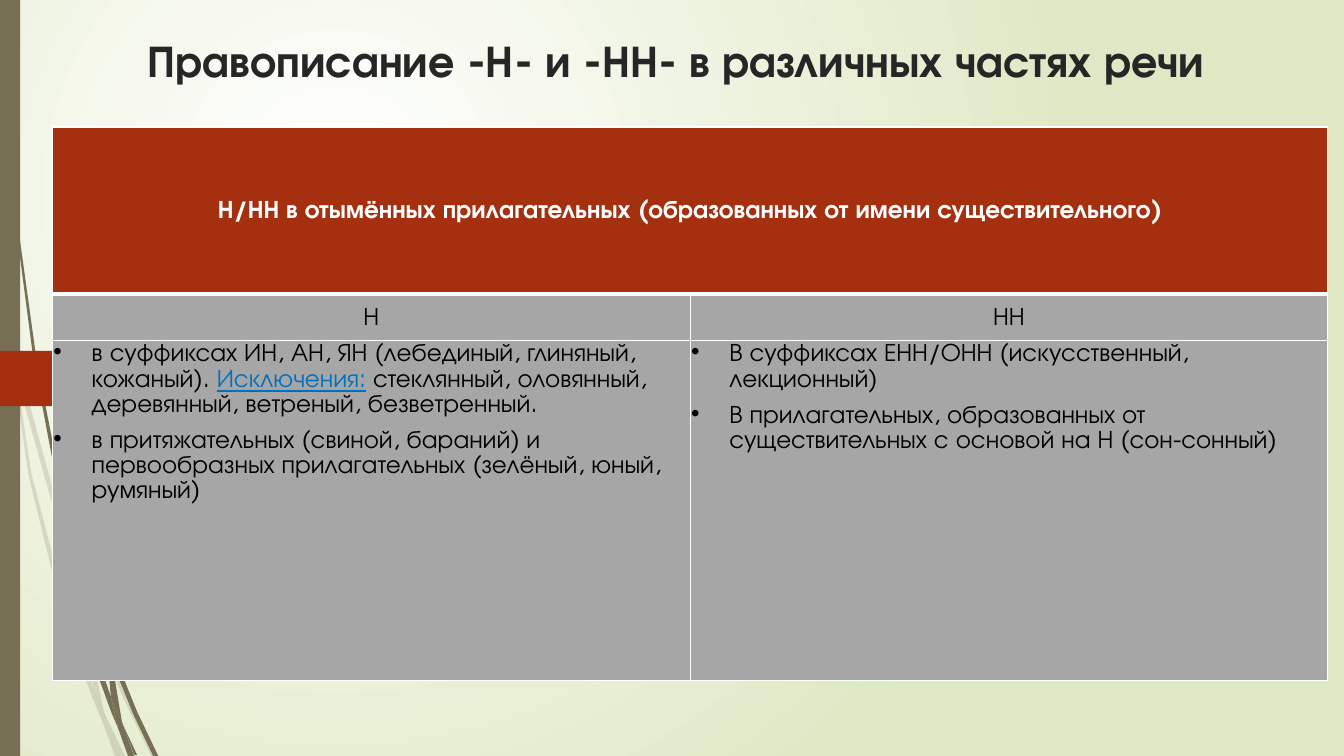
from lxml.etree import SubElement
from pptx import Presentation
from pptx.dml.color import RGBColor
from pptx.enum.shapes import MSO_SHAPE as Shape
from pptx.enum.text import MSO_ANCHOR as Anchor, PP_ALIGN as Align
from pptx.oxml import parse_xml
from pptx.oxml.ns import nsdecls, qn
from pptx.util import Inches, Pt

# Content
TITLE = "Правописание -Н- и -НН- в различных частях речи"
HEADER = "Н/НН в отымённых прилагательных (образованных от имени существительного)"
COLUMNS = ["Н", "НН"]
RULES = [  # per column: paragraphs, each a list of (text, style)
    [[("в суффиксах ИН, АН, ЯН (лебединый, глиняный, кожаный). ", "body"),
      ("Исключения:", "exception"),
      (" стеклянный, оловянный, деревянный, ветреный, безветренный.", "body")],
     [("в притяжательных (свиной, бараний) и первообразных прилагательных "
       "(зелёный, юный, румяный)", "body")]],
    [[("В суффиксах ЕНН/ОНН (искусственный, лекционный)", "body")],
     [("В прилагательных, образованных от существительных с основой на Н "
       "(сон-сонный)", "body")]],
]

# Grass blades: outline points in inches
PALE_BLADES = [
    [(.11, 3.5), (.09, 3.22), (0, 2.82), (0, 2.99), (.1, 3.44)],
    [(.58, 5.22), (.84, 6), (.85, 5.87), (.62, 5.2), (.14, 3.45), (.17, 3.76)],
    [(.92, 6.07), (.88, 5.96), (.88, 6.1), (1.23, 6.94), (1.5, 7.5), (1.55, 7.5),
     (1.27, 6.92)],
    [(1.19, 7.5), (1.24, 7.5), (1.05, 7.11)],
    [(.93, 6.83), (.7, 6.19), (.31, 4.69), (.17, 3.76), (.11, 3.5), (.28, 4.7),
     (.65, 6.21), (.92, 6.93), (1.01, 7.14), (.99, 7.07)],
    [(.84, 5.99), (.87, 6.46), (.93, 6.83), (.96, 6.92), (1.05, 7.12), (1.03, 7.07),
     (.91, 6.46), (.88, 6.1), (.88, 6.08)],
    [(.88, 5.84), (1.1, 4.62), (1.6, 3.49), (2.29, 2.45), (2.68, 1.98), (2.9, 1.75),
     (3.12, 1.54), (3.12, 1.53), (2.89, 1.75), (2.68, 1.97), (2.28, 2.44), (1.58, 3.48),
     (1.07, 4.61), (.85, 5.84), (.85, 5.86), (.88, 5.96)],
    [(1.01, 7.14), (1.14, 7.5), (1.19, 7.5)],
    [(.88, 6.08), (.88, 6.1), (.88, 5.96), (.85, 5.86), (.84, 5.99)],
    [(.96, 6.92), (.93, 6.83), (.99, 7.07), (1.01, 7.14), (1.19, 7.5), (1.05, 7.11)],
]
DARK_BLADES = [
    [(.07, 1.1), (.17, 2.33), (.33, 3.55), (.56, 4.77), (.57, 4.81), (.55, 4.57),
     (.55, 4.53), (.36, 3.55), (.19, 2.32), (.08, 1.09), (.05, .48), (.04, 0), (.03, 0),
     (.04, .48)],
    [(.88, 5.92), (1.06, 6.45), (1.06, 6.31), (.93, 5.9), (.6, 4.72), (.64, 5.05)],
    [(1.13, 6.49), (1.1, 6.41), (1.11, 6.56), (1.32, 7.08), (1.52, 7.5), (1.57, 7.5),
     (1.36, 7.06)],
    [(1.1, 6.91), (.98, 6.57), (.72, 5.56), (.64, 5.05), (.57, 4.77), (.68, 5.57),
     (.93, 6.59), (1.11, 7.08), (1.17, 7.22), (1.16, 7.17)],
    [(.6, 4.72), (.58, 4.53), (.54, 3.49), (.58, 2.45), (.63, 1.93), (.7, 1.41),
     (.62, 1.93), (.56, 2.45), (.52, 3.49), (.55, 4.49)],
    [(1.33, 7.49), (1.36, 7.49), (1.22, 7.19)],
    [(.57, 4.77), (.64, 5.05), (.6, 4.72), (.55, 4.49), (.55, 4.53)],
    [(1.11, 6.33), (1.25, 5.52), (1.58, 4.76), (2.05, 4.06), (2.31, 3.74), (2.45, 3.59),
     (2.61, 3.44), (2.45, 3.58), (2.31, 3.73), (2.04, 4.05), (1.56, 4.74), (1.22, 5.51),
     (1.06, 6.31), (1.1, 6.41)],
    [(1.17, 7.22), (1.27, 7.5), (1.31, 7.5)],
    [(1.06, 6.45), (1.1, 6.91), (1.16, 7.06), (1.22, 7.19), (1.21, 7.16), (1.11, 6.56),
     (1.09, 6.51)],
    [(1.06, 6.45), (1.09, 6.51), (1.11, 6.56), (1.1, 6.41), (1.06, 6.31)],
    [(1.16, 7.06), (1.1, 6.91), (1.16, 7.17), (1.17, 7.22), (1.3, 7.5), (1.33, 7.5),
     (1.22, 7.19)],
]
ARROW = [(1.74, 3.75), (1.48, 4.02), (1.46, 4.03), (0, 4.03), (0, 3.48), (1.46, 3.48),
         (1.48, 3.49)]

THEME = {
    "font": "TeX Gyre Adventor",
    "white": "FFFFFF", "meadow": "DFE8C4", "olive": "766F54",
    "rust": "A53010", "grey": "A6A6A6",
    "styles": {
        "title": {"size": 32, "color": "262626", "bold": True},
        "header": {"size": 18, "color": "FFFFFF", "bold": True},
        "body": {"size": 18, "color": "000000", "bold": False},
        "exception": {"size": 18, "color": "0070C0", "bold": False, "underline": True},
    },
}
TABLE_LEFT, TABLE_TOP, TABLE_WIDTH = .52, 1.26, 12.65
ROW_HEIGHTS = [1.66, .46, 3.37]


def color(name):
    return RGBColor.from_string(THEME[name])


def add_span(para, text, style):
    span = para.add_run()
    span.text = text
    look = dict(THEME["styles"][style], name=THEME["font"])
    span.font.color.rgb = RGBColor.from_string(look.pop("color"))
    look["size"] = Pt(look["size"])
    for key, value in look.items():
        setattr(span.font, key, value)


def paint(shape, name, opacity=None):
    shape.shadow.inherit = False
    shape.fill.solid()
    shape.fill.fore_color.rgb = color(name)
    shape.line.fill.background()
    if opacity:
        tint = shape.element.spPr.find(f"{qn('a:solidFill')}/{qn('a:srgbClr')}")
        SubElement(tint, qn("a:alpha"), val=str(opacity * 1000))


def add_outline(page, points, name, opacity=None):
    start, *rest = [(Inches(x), Inches(y)) for x, y in points]
    builder = page.shapes.build_freeform(*start)
    builder.add_line_segments(rest, close=True)
    paint(builder.convert_to_shape(), name, opacity)


def set_background(page):
    fill = page.background.fill
    fill.gradient()
    for stop, name in zip(fill.gradient_stops, ("white", "meadow")):
        stop.color.rgb = color(name)
    gradient = page.element.find(".//" + qn("a:gradFill"))
    gradient.remove(gradient.find(qn("a:lin")))
    circle = SubElement(gradient, qn("a:path"), path="circle")
    SubElement(circle, qn("a:fillToRect"), l="50000", t="50000", r="100000", b="100000")


def format_cell(cell, fill, widths, anchor):
    for side in ("left", "top", "right", "bottom"):
        setattr(cell, f"margin_{side}", Inches(.01))
    cell.vertical_anchor = anchor
    cell.fill.solid()
    cell.fill.fore_color.rgb = color(fill)
    properties = cell._tc.get_or_add_tcPr()
    for index, side in enumerate("LRTB"):
        properties.insert(index, parse_xml(
            f'<a:ln{side} {nsdecls("a")} w="{Pt(widths.get(side, 1))}"><a:solidFill>'
            f'<a:srgbClr val="{THEME["white"]}"/></a:solidFill></a:ln{side}>'))


def add_label(cell, text, style):
    para = cell.text_frame.paragraphs[0]
    para.alignment, para.line_spacing = Align.CENTER, 1.07
    add_span(para, text, style)


def add_rules(cell, rules):
    frame = cell.text_frame
    for index, spans in enumerate(rules):
        para = frame.add_paragraph() if index else frame.paragraphs[0]
        para.line_spacing, para.space_after = 1.07, Pt(8)
        properties = para._p.get_or_add_pPr()
        properties.set("marL", str(Inches(.38)))
        properties.set("indent", str(Inches(-.38)))
        SubElement(properties, qn("a:buChar"), char="•")
        tabs = SubElement(properties, qn("a:tabLst"))
        SubElement(tabs, qn("a:tab"), pos=str(Inches(.5)), algn="l")
        for text, style in spans:
            add_span(para, text, style)


def main():
    deck = Presentation()
    deck.slide_width, deck.slide_height = Inches(13.33), Inches(7.5)
    page = deck.slides.add_slide(deck.slide_layouts[6])
    set_background(page)

    # Left decoration
    for blade in PALE_BLADES:
        add_outline(page, blade, "olive", opacity=20)
    for blade in DARK_BLADES:
        add_outline(page, blade, "olive")
    paint(page.shapes.add_shape(Shape.RECTANGLE, 0, 0, Inches(.2), Inches(7.5)), "olive")
    add_outline(page, ARROW, "rust")

    # Title
    box = page.shapes.add_textbox(Inches(.64), Inches(.08), Inches(12.14), Inches(.83))
    frame = box.text_frame
    frame.word_wrap, frame.vertical_anchor = True, Anchor.BOTTOM
    frame.paragraphs[0].alignment = Align.CENTER
    add_span(frame.paragraphs[0], TITLE, "title")

    # Table
    table = page.shapes.add_table(
        len(ROW_HEIGHTS), len(COLUMNS), Inches(TABLE_LEFT), Inches(TABLE_TOP),
        Inches(TABLE_WIDTH), Inches(sum(ROW_HEIGHTS))).table
    for row, height in zip(table.rows, ROW_HEIGHTS):
        row.height = Inches(height)
    table.cell(0, 0).merge(table.cell(0, 1))
    add_label(table.cell(0, 0), HEADER, "header")
    for index, (label, rules) in enumerate(zip(COLUMNS, RULES)):
        top, middle, bottom = (table.cell(row, index) for row in range(3))
        format_cell(top, "rust", {"B": 3}, Anchor.MIDDLE)
        format_cell(middle, "grey", {"T": 3}, Anchor.MIDDLE)
        format_cell(bottom, "grey", {}, Anchor.TOP)
        add_label(middle, label, "body")
        add_rules(bottom, rules)

    deck.save("out.pptx")


if __name__ == "__main__":
    main()
